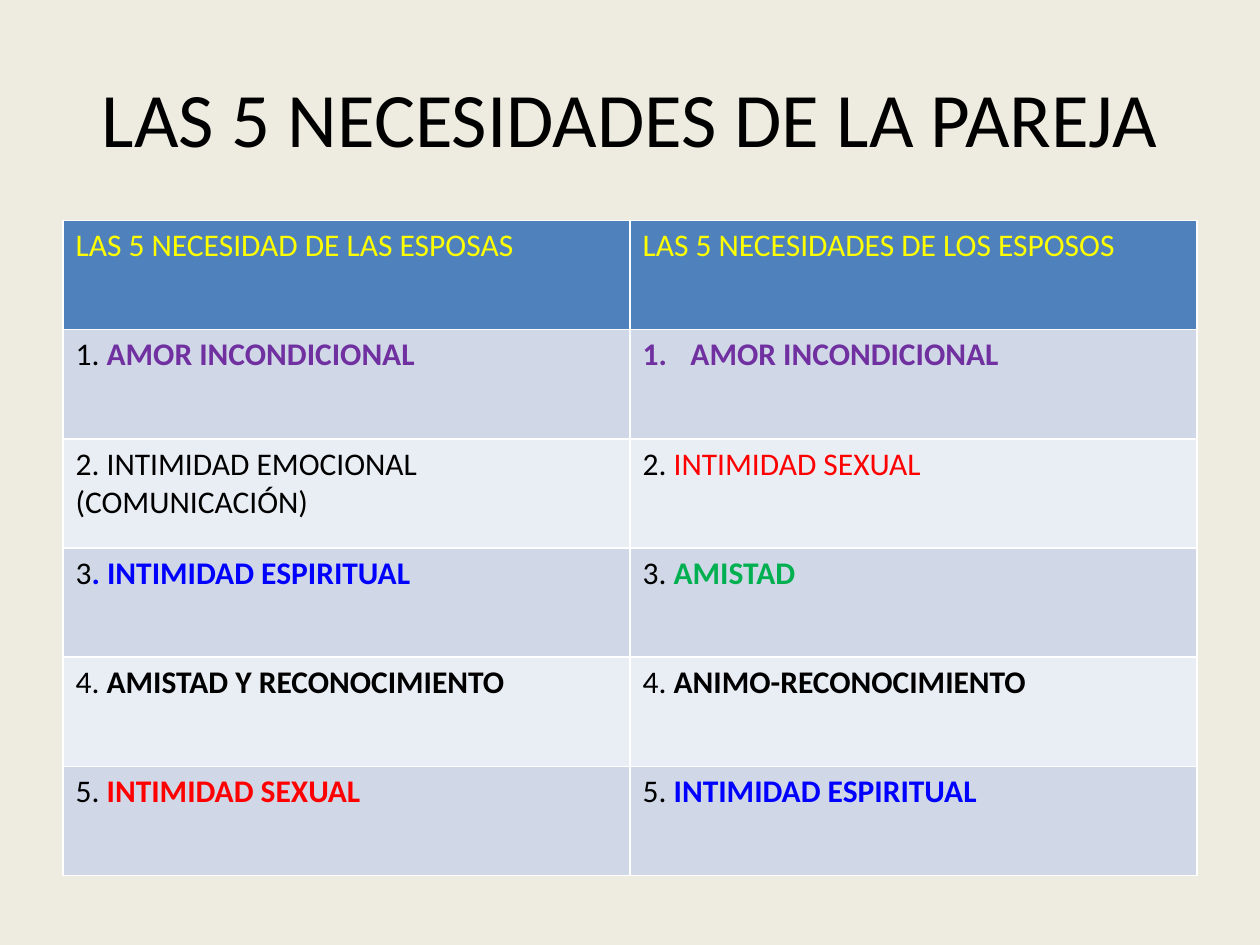
from lxml import etree
from pptx import Presentation
from pptx.dml.color import RGBColor
from pptx.enum.text import MSO_ANCHOR, PP_ALIGN
from pptx.oxml.ns import qn
from pptx.util import Inches, Pt

MIDDLE = MSO_ANCHOR.MIDDLE
CENTER = PP_ALIGN.CENTER

# Content: each cell is a list of (text, colour, bold) runs
TITLE = "LAS 5 NECESIDADES DE LA PAREJA"
HEADS = ["LAS 5 NECESIDAD DE LAS ESPOSAS", "LAS 5 NECESIDADES DE LOS ESPOSOS"]
LOVE = ("AMOR INCONDICIONAL", "purple", True)
NEEDS = [
    ([("1. ", "black", False), LOVE], [LOVE]),
    ([("2. INTIMIDAD EMOCIONAL (COMUNICACIÓN)", "black", False)],
     [("2. ", "black", False), ("INTIMIDAD SEXUAL", "red", False)]),
    ([("3", "black", False), (". INTIMIDAD ESPIRITUAL", "blue", True)],
     [("3. ", "black", False), ("AMISTAD", "green", True)]),
    ([("4. ", "black", False), ("AMISTAD Y RECONOCIMIENTO", "black", True)],
     [("4. ", "black", False), ("ANIMO-RECONOCIMIENTO", "black", True)]),
    ([("5. ", "black", False), ("INTIMIDAD SEXUAL", "red", True)],
     [("5. ", "black", False), ("INTIMIDAD ESPIRITUAL", "blue", True)]),
]
NUMBERED = (1, 1)  # row and column of the cell with automatic numbering

THEME = {
    "font": "Calibri", "title": 44, "body": 18, "rule": 1,
    "back": "EEECE1", "head": "4F81BD", "bands": ["D0D8E8", "E9EDF4"],
    "line": "FFFFFF", "black": "000000", "yellow": "FFFF00",
    "purple": "7030A0", "red": "FF0000", "blue": "0000FF", "green": "00B050",
}
LEFT, WIDTH = 0.5, 9
TOP, HEIGHT = 1.75, 5.2


def color(name):
    return RGBColor.from_string(THEME[name])


def style(font, size):
    font.name = THEME["font"]
    font.size = Pt(THEME[size])


def add_borders(cell):
    props = cell._tc.get_or_add_tcPr()
    for side in ("a:lnL", "a:lnR", "a:lnT", "a:lnB"):
        line = etree.SubElement(props, qn(side), w=str(Pt(THEME["rule"])))
        fill = etree.SubElement(line, qn("a:solidFill"))
        etree.SubElement(fill, qn("a:srgbClr"), val=THEME["line"])


def add_number(para):
    props = para._p.get_or_add_pPr()
    indent = Inches(0.38)
    props.set("marL", str(indent))
    props.set("indent", str(-indent))
    etree.SubElement(props, qn("a:buFont"), typeface="+mj-lt")
    etree.SubElement(props, qn("a:buAutoNum"), type="arabicPeriod")


def fill_cell(cell, runs, fill):
    add_borders(cell)
    cell.fill.solid()
    cell.fill.fore_color.rgb = RGBColor.from_string(fill)
    para = cell.text_frame.paragraphs[0]
    for text, tint, bold in runs:
        run = para.add_run()
        run.text = text
        style(run.font, "body")
        run.font.bold = bold
        run.font.color.rgb = color(tint)
    return para


# Slide and background
deck = Presentation()
deck.slide_width, deck.slide_height = Inches(10), Inches(7.5)
slide = deck.slides.add_slide(deck.slide_layouts[5])
slide.background.fill.solid()
slide.background.fill.fore_color.rgb = color("back")

# Title
title = slide.shapes.title
title.left, title.top = Inches(LEFT), Inches(0.3)
title.width, title.height = Inches(WIDTH), Inches(1.25)
title.text_frame.text = TITLE
title.text_frame.vertical_anchor = MIDDLE
para = title.text_frame.paragraphs[0]
para.alignment = CENTER
style(para.font, "title")
para.font.color.rgb = color("black")

# Table: a header row, then banded rows
rows = [[[(head, "yellow", False)] for head in HEADS], *NEEDS]
table = slide.shapes.add_table(
    len(rows), len(HEADS),
    Inches(LEFT), Inches(TOP), Inches(WIDTH), Inches(HEIGHT)).table
for r, row in enumerate(rows):
    fill = THEME["bands"][(r - 1) % 2] if r else THEME["head"]
    for c, runs in enumerate(row):
        para = fill_cell(table.cell(r, c), runs, fill)
        if (r, c) == NUMBERED:
            add_number(para)

deck.save("out.pptx")
